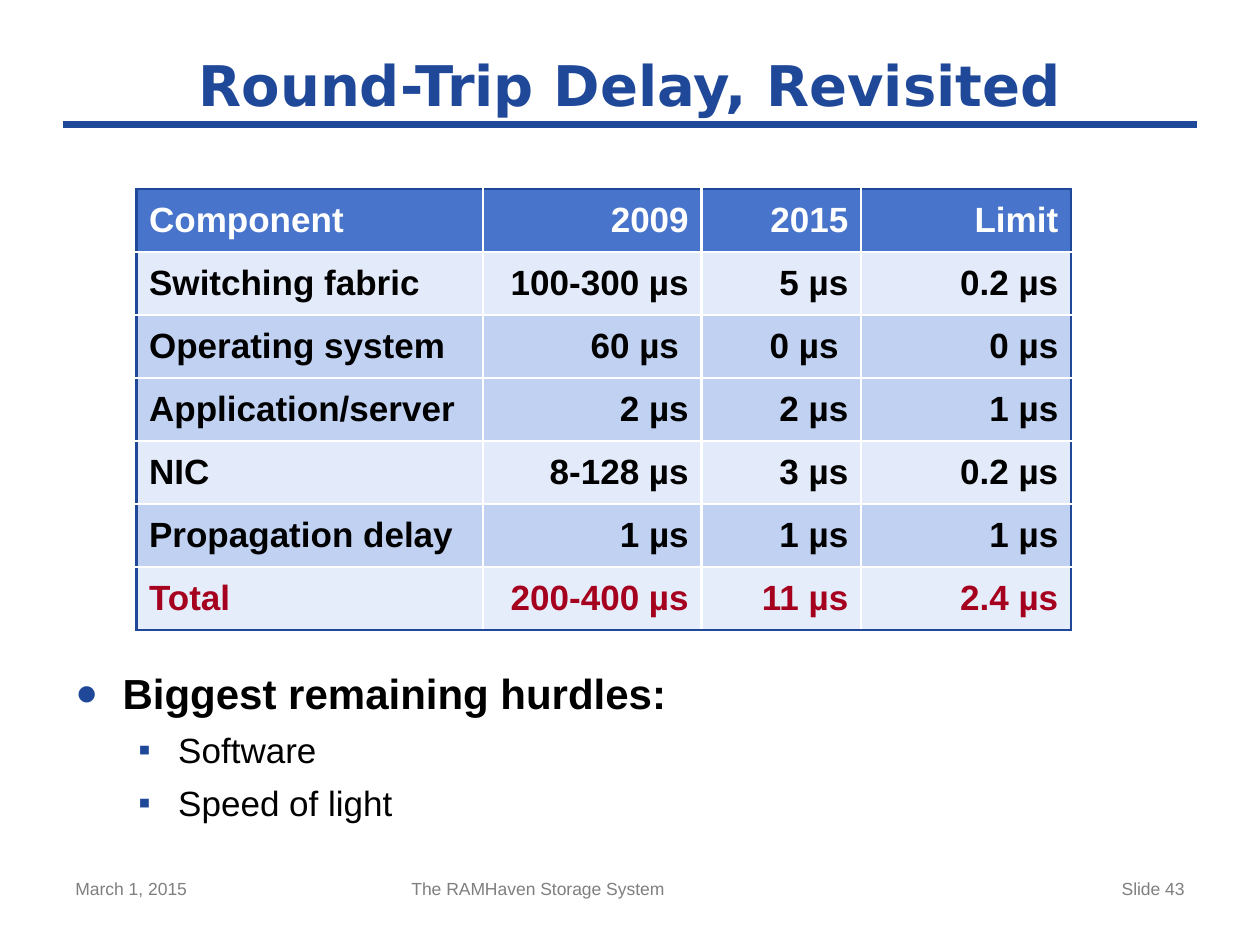
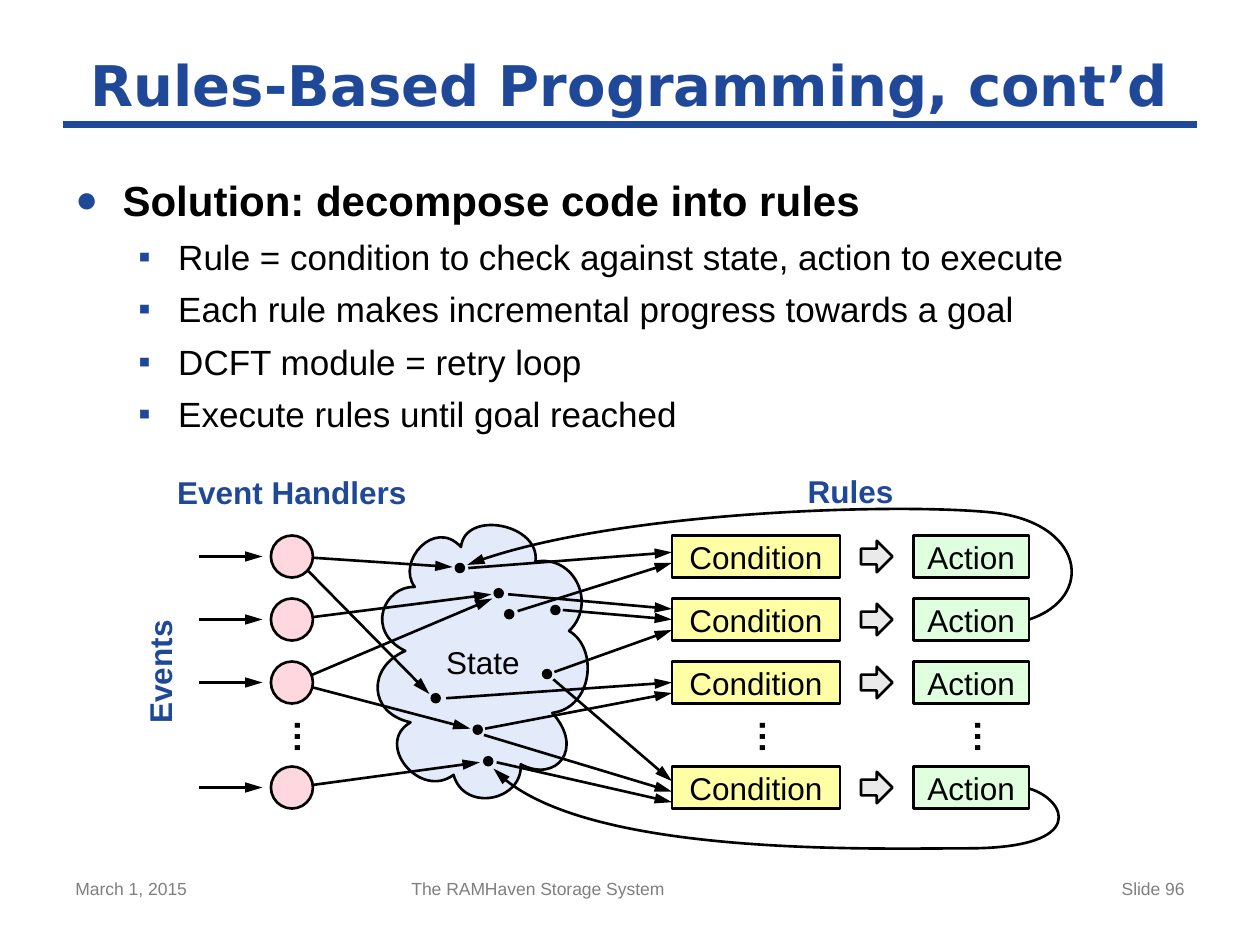
import pptx
import pptx.util
import pptx.dml.color
import pptx.enum.text
import pptx.enum.shapes
import pptx.oxml.ns
import lxml.etree

PX = 7620
INK = {"blue": "1F4899", "head": "4974CB", "pale": "E3EAF9", "mid": "C0D1F2", "sum": "E6EDFA",
       "red": "A5001E", "grey": "7F7F7F", "black": "000000", "white": "FFFFFF", "pink": "FFD7DF",
       "yellow": "FFFFA5", "green": "DFFFDF", "silver": "EAEAEA"}
RGB = {name: pptx.dml.color.RGBColor.from_string(code) for name, code in INK.items()}
Pt = pptx.util.Pt
qn = pptx.oxml.ns.qn
ALIGN = pptx.enum.text.PP_ALIGN
ANCHOR = pptx.enum.text.MSO_ANCHOR
FIT = pptx.enum.text.MSO_AUTO_SIZE
KIND = pptx.enum.shapes.MSO_SHAPE
sub = lxml.etree.SubElement


def write(para, text, size, ink, bold=False, align=ALIGN.LEFT, font="Arial"):
    run = para.add_run()
    run.text = text
    run.font.size = Pt(size)
    run.font.name = font
    run.font.bold = bold
    run.font.color.rgb = RGB[ink]
    para.alignment = align


def link(slide, ends, ink, width):
    wire = slide.shapes.add_connector(
        pptx.enum.shapes.MSO_CONNECTOR.STRAIGHT, *[n * PX for n in ends])
    wire.line.color.rgb = RGB[ink]
    wire.line.width = Pt(width)
    sub(wire._element.spPr, qn("a:effectLst"))
    return wire


deck = pptx.Presentation()
deck.slide_width = 1200 * PX
deck.slide_height = 900 * PX

pages = [
    ("Round-Trip Delay, Revisited", 43, (60, 630, 1080, 174),
     ["Biggest remaining hurdles:", "Software", "Speed of light"]),
    ("Rules-Based Programming, cont’d", 96, (60, 160, 1080, 644),
     ["Solution: decompose code into rules",
      "Rule = condition to check against state, action to execute",
      "Each rule makes incremental progress towards a goal",
      "DCFT module = retry loop",
      "Execute rules until goal reached"]),
]
slides = []
for head, number, box, points in pages:
    slide = deck.slides.add_slide(deck.slide_layouts[5])
    slides.append(slide)
    link(slide, (60, 119, 1140, 119), "blue", 4)

    title = slide.shapes.title
    title.left, title.top, title.width, title.height = [n * PX for n in (60, 40, 1080, 80)]
    title.text_frame.auto_size = FIT.NONE
    title.text_frame.vertical_anchor = ANCHOR.MIDDLE
    write(title.text_frame.paragraphs[0], head, 32, "blue", True, ALIGN.CENTER, "DejaVu Sans")

    body = slide.shapes.add_textbox(*[n * PX for n in box]).text_frame
    body.word_wrap = True
    for i, point in enumerate(points):
        para = body.add_paragraph() if i else body.paragraphs[0]
        para.level = 1 if i else 0
        para.space_before = Pt(6 if i else 12)
        props = para._p.get_or_add_pPr()
        props.set("marL", str((98 if i else 45) * PX))
        props.set("indent", str((-38 if i else -45) * PX))
        sub(sub(props, qn("a:buClr")), qn("a:srgbClr"), val=INK["blue"])
        sub(props, qn("a:buSzPct"), val="100000" if i else "90000")
        sub(props, qn("a:buFont"), typeface="Arial")
        sub(props, qn("a:buChar"), char="▪" if i else "●")
        write(para, point, 20 if i else 24, "black", not i)

    for text, left, width, align in [
            ("March 1, 2015", 60, 280, ALIGN.LEFT),
            ("The RAMHaven Storage System", 380, 450, ALIGN.LEFT),
            (f"Slide {number}", 860, 280, ALIGN.RIGHT)]:
        foot = slide.shapes.add_textbox(left * PX, 830 * PX, width * PX, 52 * PX).text_frame
        foot.word_wrap = True
        write(foot.paragraphs[0], text, 10, "grey", align=align)

delay, rules = slides

data = [
    ("head", "white", ["Component", "2009", "2015", "Limit"]),
    ("pale", "black", ["Switching fabric", "100-300 µs", "5 µs", "0.2 µs"]),
    ("mid", "black", ["Operating system", "60 µs ", "0 µs ", "0 µs"]),
    ("mid", "black", ["Application/server", "2 µs", "2 µs", "1 µs"]),
    ("pale", "black", ["NIC", "8-128 µs", "3 µs", "0.2 µs"]),
    ("mid", "black", ["Propagation delay", "1 µs", "1 µs", "1 µs"]),
    ("sum", "red", ["Total", "200-400 µs", "11 µs", "2.4 µs"]),
]
widths = [330, 208, 152, 200]
grid = delay.shapes.add_table(
    len(data), len(widths), 130 * PX, 180 * PX, sum(widths) * PX, 60 * len(data) * PX).table
for col, width in zip(grid.columns, widths):
    col.width = width * PX
for r, (fill, ink, texts) in enumerate(data):
    grid.rows[r].height = 60 * PX
    for c, text in enumerate(texts):
        cell = grid.cell(r, c)
        cell.vertical_anchor = ANCHOR.MIDDLE
        props = cell._tc.get_or_add_tcPr()
        for side, outer in [("L", c == 0), ("R", c == len(widths) - 1),
                            ("T", r == 0), ("B", r == len(data) - 1)]:
            edge = sub(props, qn(f"a:ln{side}"), w=str(Pt(1.5)))
            sub(sub(edge, qn("a:solidFill")), qn("a:srgbClr"),
                val=INK["blue" if outer else "white"])
        cell.fill.solid()
        cell.fill.fore_color.rgb = RGB[fill]
        write(cell.text_frame.paragraphs[0], text, 20, ink, True,
              ALIGN.RIGHT if c else ALIGN.LEFT)

tops = [510, 570, 630, 730]
curves = [
    ((360, 500, 200, 260), "pale", "State", [
        (510, 535), (547, 528), (569, 575), (542, 601), (570, 617), (565, 674), (526, 679),
        (557, 713), (530, 746), (496, 728), (498, 763), (442, 774), (432, 738),
        (400, 762), (356, 708), (391, 688), (350, 679), (350, 635), (386, 620),
        (347, 601), (366, 558), (395, 559), (377, 535), (414, 493), (439, 521),
        (443, 485), (515, 499), (510, 535)]),
    ((445, 485, 576, 105), None, "", [
        (980, 590), (1044, 569), (1033, 497), (944, 488), (854, 479), (576, 487), (445, 538)]),
    ((470, 732, 538, 77), None, "", [
        (980, 751), (1015, 761), (1038, 808), (922, 808), (836, 808), (547, 817), (470, 732)]),
]
tips = []
for box, fill, text, knots in curves:
    pen = rules.shapes.build_freeform(*knots[0], scale=PX)
    pen.add_line_segments(knots[1:], close=bool(fill))
    shape = pen.convert_to_shape()
    shape.left, shape.top, shape.width, shape.height = [n * PX for n in box]
    route = shape._element.find(".//" + qn("a:path"))
    route.set("w", str(box[2]))
    route.set("h", str(box[3]))
    for knot, (x, y) in zip(route.iter(qn("a:pt")), knots):
        knot.set("x", str(x - box[0]))
        knot.set("y", str(y - box[1]))
    legs = route.findall(qn("a:lnTo"))
    for i in range(0, len(legs), 3):
        bend = lxml.etree.Element(qn("a:cubicBezTo"))
        legs[i].addprevious(bend)
        for leg in legs[i:i + 3]:
            bend.append(leg[0])
            route.remove(leg)
    shape.shadow.inherit = False
    shape.line.color.rgb = RGB["black"]
    shape.line.width = Pt(1.5)
    if fill:
        shape.fill.solid()
        shape.fill.fore_color.rgb = RGB[fill]
        frame = shape.text_frame
        frame.margin_left = frame.margin_right = frame.margin_top = frame.margin_bottom = 0
        frame.vertical_anchor = ANCHOR.MIDDLE
        write(frame.paragraphs[0], text, 18, "black", align=ALIGN.CENTER)
    else:
        shape.fill.background()
        tips.append(shape)

links = [(190, top + 20, 250, top + 20) for top in tops] + [
    (280, 530, 431, 540), (280, 530, 409, 661), (280, 590, 468, 566),
    (280, 650, 469, 570), (280, 650, 448, 694), (280, 750, 457, 726),
    (473, 726, 640, 764), (461, 700, 640, 754), (527, 647, 640, 744),
    (462, 694, 640, 660), (425, 665, 640, 650), (528, 640, 640, 600),
    (536, 581, 640, 590), (484, 566, 640, 580), (493, 582, 640, 536),
    (446, 541, 640, 526)]
wires = [link(rules, ends, "black", 1.5) for ends in links]
for item in tips + wires:
    sub(item.line._get_or_add_ln(), qn("a:tailEnd"), type="triangle", len="lg")

parts = [(KIND.OVAL, (x, y, 10, 10), "black", "") for x, y in [
    (433, 536), (470, 560), (410, 660), (450, 690),
    (460, 720), (516, 637), (524, 576), (480, 580)]]
for top in tops:
    parts += [(KIND.OVAL, (258, top, 40, 40), "pink", ""),
              (KIND.RECTANGLE, (640, top, 160, 40), "yellow", "Condition"),
              (KIND.RIGHT_ARROW, (820, top + 5, 30, 30), "silver", ""),
              (KIND.RECTANGLE, (870, top, 110, 40), "green", "Action")]
for kind, box, fill, text in parts:
    shape = rules.shapes.add_shape(kind, *[n * PX for n in box])
    shape.shadow.inherit = False
    shape.fill.solid()
    shape.fill.fore_color.rgb = RGB[fill]
    if fill == "black":
        shape.line.fill.background()
    else:
        shape.line.color.rgb = RGB["black"]
        shape.line.width = Pt(1.5)
    if text:
        frame = shape.text_frame
        frame.margin_left = frame.margin_right = frame.margin_top = frame.margin_bottom = 0
        frame.vertical_anchor = ANCHOR.MIDDLE
        write(frame.paragraphs[0], text, 18, "black", align=ALIGN.CENTER)
        for wire, ends in zip(wires, links):
            if ends[2:] == (box[0], box[1] + 20):
                wire.end_connect(shape, 1)

for text, box, turn in [
        ("Event Handlers", (158, 451, 240, 36), 0),
        ("Rules", (640, 450, 340, 36), 0),
        ("Events", (22, 622, 260, 36), 270)]:
    label = rules.shapes.add_textbox(*[n * PX for n in box])
    label.rotation = turn
    frame = label.text_frame
    frame.margin_left = frame.margin_right = frame.margin_top = frame.margin_bottom = 0
    frame.word_wrap = False
    write(frame.paragraphs[0], text, 18, "blue", True, ALIGN.CENTER)

for left in (255, 698, 903):
    frame = rules.shapes.add_textbox(left * PX, 679 * PX, 65 * PX, 46 * PX).text_frame
    frame.word_wrap = False
    frame.auto_size = FIT.SHAPE_TO_FIT_TEXT
    frame._txBody.bodyPr.set("vert", "vert")
    write(frame.paragraphs[0], "…", 20, "black", True, ALIGN.CENTER)

deck.save("out.pptx")
